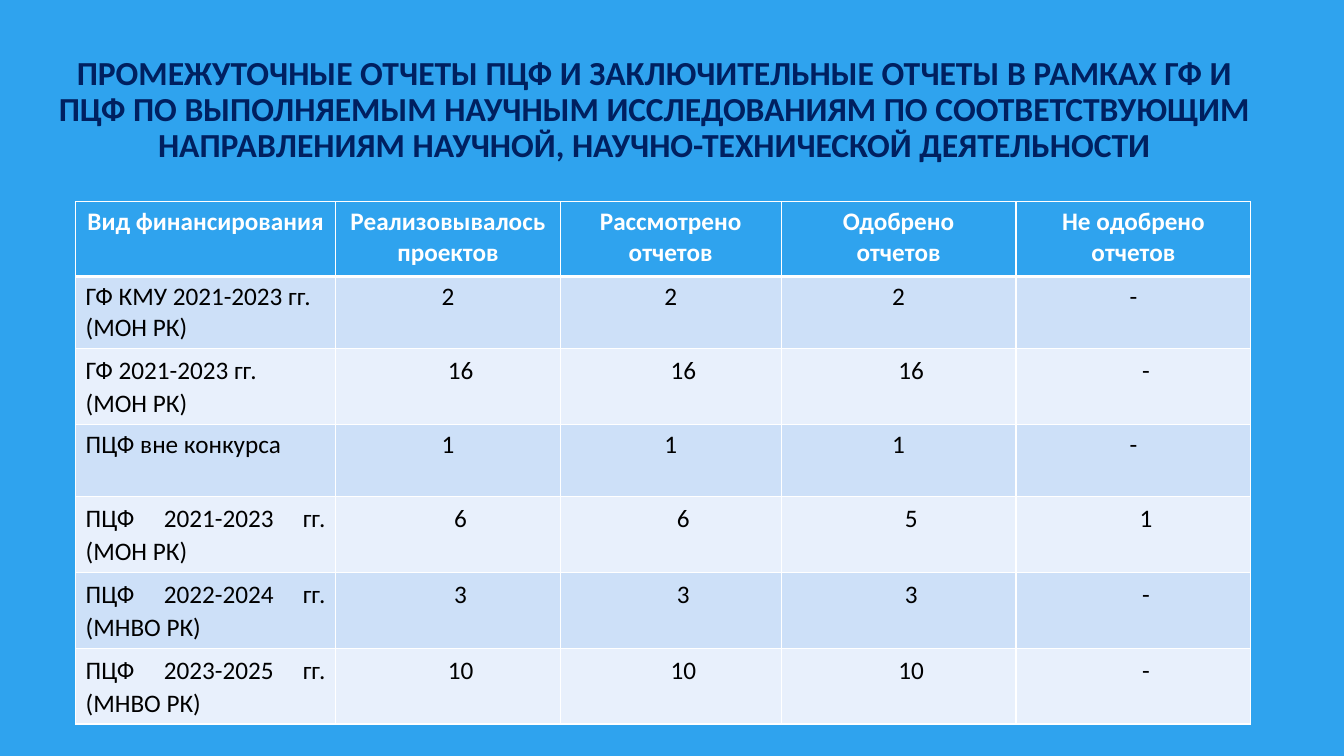
from dataclasses import dataclass

from lxml.etree import SubElement
from pptx import Presentation
from pptx.dml.color import RGBColor
from pptx.enum.text import MSO_ANCHOR as Anchor, PP_ALIGN as Align
from pptx.oxml.ns import qn
from pptx.util import Pt

BLUE, NAVY, WHITE, BLACK = "2FA3EE", "002060", "FFFFFF", "000000"
BANDS = ("CDE0F8", "E8F0FC")
COL_WIDTHS = (185.8, 160.4, 157.8, 167.8, 167.8)
HEADER_HEIGHT = 53.6
TITLE = ("ПРОМЕЖУТОЧНЫЕ ОТЧЕТЫ ПЦФ И ЗАКЛЮЧИТЕЛЬНЫЕ ОТЧЕТЫ В РАМКАХ ГФ И ПЦФ "
         "ПО ВЫПОЛНЯЕМЫМ НАУЧНЫМ ИССЛЕДОВАНИЯМ ПО СООТВЕТСТВУЮЩИМ "
         "НАПРАВЛЕНИЯМ НАУЧНОЙ, НАУЧНО-ТЕХНИЧЕСКОЙ ДЕЯТЕЛЬНОСТИ")
HEADERS = ("Вид финансирования", "Реализовывалось проектов",
           "Рассмотрено отчетов", "Одобрено\nотчетов", "Не одобрено отчетов")


@dataclass
class Funding:
    name: str
    counts: tuple[str, ...]
    height: float = 54.2
    spaced: bool = True  # looser lines, justified name, indented counts


FUNDINGS = (
    Funding("ГФ КМУ 2021-2023 гг. (МОН РК)", ("2", "2", "2", "-"), 51.2, False),
    Funding("ГФ 2021-2023 гг.\n(МОН РК)", ("16", "16", "16", "-")),
    Funding("ПЦФ вне конкурса", ("1", "1", "1", "-"), 51.6, False),
    Funding("ПЦФ 2021-2023 гг. (МОН РК)", ("6", "6", "5", "1")),
    Funding("ПЦФ 2022-2024 гг. (МНВО РК)", ("3", "3", "3", "-")),
    Funding("ПЦФ 2023-2025 гг. (МНВО РК)", ("10", "10", "10", "-")),
)


def rgb(color: str) -> RGBColor:
    return RGBColor.from_string(color)


def write(tf, text: str, *, size: float = 18, color: str = BLACK,
          bold: bool = False, align=Align.CENTER, spacing: float = 1.0,
          indent: float = 0) -> None:
    tf.word_wrap = True
    for i, line in enumerate(text.split("\n")):
        p = tf.paragraphs[0] if i == 0 else tf.add_paragraph()
        p.alignment, p.line_spacing = align, spacing
        if indent:
            p._p.get_or_add_pPr().set("marL", str(Pt(indent)))
        r = p.add_run()
        r.text = line
        r.font.name, r.font.size, r.font.bold = "Calibri", Pt(size), bold
        r.font.color.rgb = rgb(color)


def style_cell(cell, fill: str, top: float = 1, bottom: float = 1) -> None:
    tc_pr = cell._tc.get_or_add_tcPr()
    for side, width in (("L", 1), ("R", 1), ("T", top), ("B", bottom)):
        ln = SubElement(tc_pr, qn(f"a:ln{side}"), w=str(Pt(width)))
        SubElement(SubElement(ln, qn("a:solidFill")), qn("a:srgbClr"), val=WHITE)
    cell.fill.solid()
    cell.fill.fore_color.rgb = rgb(fill)


def add_title(s) -> None:
    sp = s.shapes.add_textbox(Pt(27.4), Pt(16.6), Pt(879.8), Pt(124.6))
    sp.text_frame.vertical_anchor = Anchor.MIDDLE
    write(sp.text_frame, TITLE, size=24, color=NAVY, bold=True, spacing=0.9)


def add_report_table(s) -> None:
    heights = (HEADER_HEIGHT, *(f.height for f in FUNDINGS))
    table = s.shapes.add_table(len(heights), len(COL_WIDTHS), Pt(54), Pt(144),
                               Pt(sum(COL_WIDTHS)), Pt(sum(heights))).table
    for col, width in zip(table.columns, COL_WIDTHS):
        col.width = Pt(width)
    for row, height in zip(table.rows, heights):
        row.height = Pt(height)

    # Header row
    for cell, text in zip(table.rows[0].cells, HEADERS):
        style_cell(cell, BLUE, bottom=3)
        write(cell.text_frame, text, color=WHITE, bold=True)

    # Funding rows
    for i, f in enumerate(FUNDINGS):
        spacing = 1.07 if f.spaced else 1.0
        name_align = Align.JUSTIFY if f.spaced else Align.LEFT
        for j, text in enumerate((f.name, *f.counts)):
            cell = table.cell(i + 1, j)
            style_cell(cell, BANDS[i % 2], top=3 if i == 0 else 1)
            write(cell.text_frame, text, spacing=spacing,
                  align=Align.CENTER if j else name_align,
                  indent=18 if j and f.spaced else 0)


def main() -> None:
    prs = Presentation()
    prs.slide_width, prs.slide_height = Pt(960), Pt(540)
    s = prs.slides.add_slide(prs.slide_layouts[6])
    s.background.fill.solid()
    s.background.fill.fore_color.rgb = rgb(BLUE)
    add_title(s)
    add_report_table(s)
    prs.save("out.pptx")


if __name__ == "__main__":
    main()
